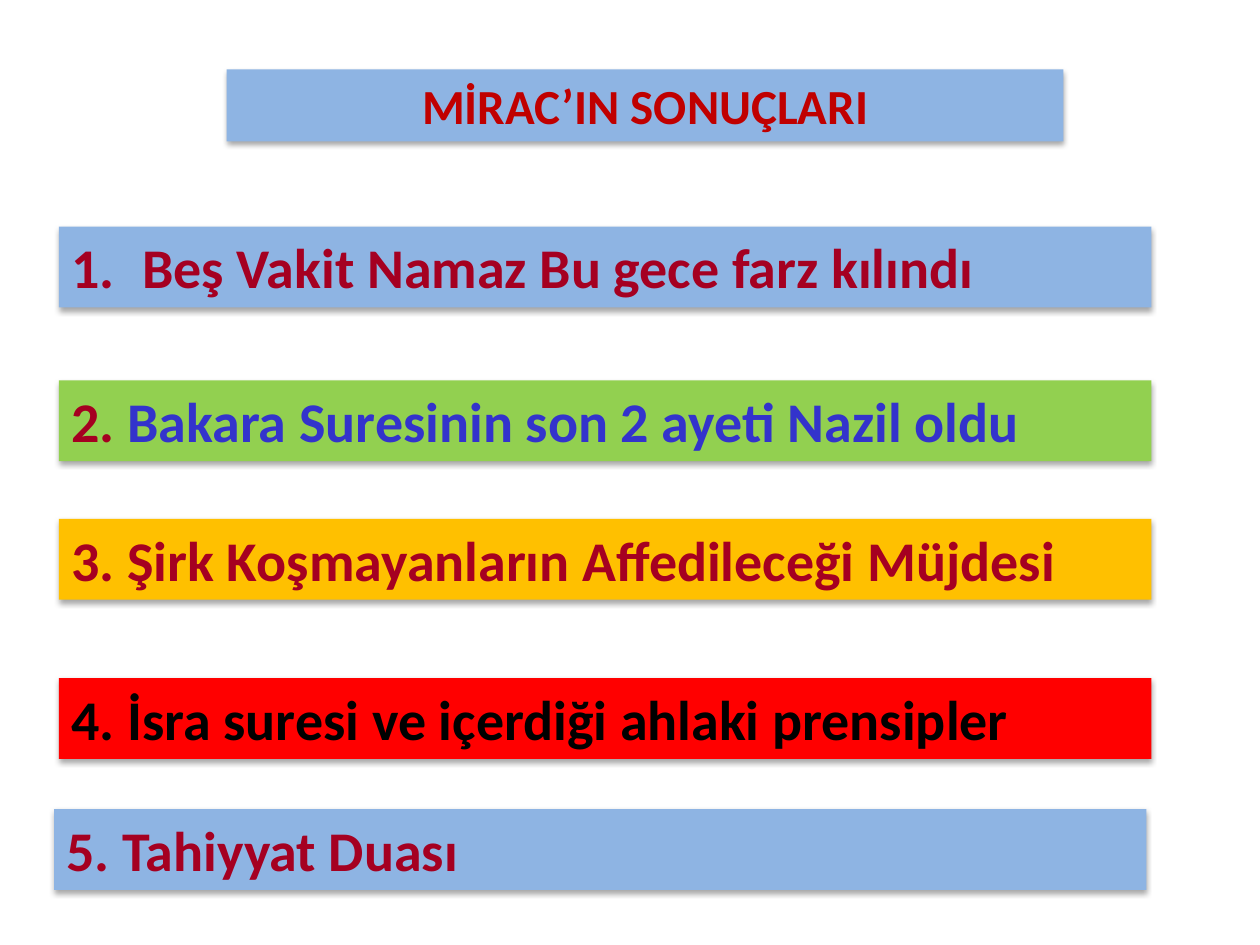
from dataclasses import dataclass

from lxml import etree
from pptx import Presentation
from pptx import util as u
from pptx.dml.color import RGBColor
from pptx.enum import shapes, text
from pptx.oxml.ns import qn


@dataclass(frozen=True)
class Theme:
    """Colours, font and type sizes of the slide."""
    font: str = "Calibri"
    title_size: int = 28
    item_size: int = 32
    blue: str = "8EB4E3"
    green: str = "92D050"
    amber: str = "FFC000"
    red: str = "FF0000"
    title_ink: str = "C00000"
    crimson: str = "A50021"
    indigo: str = "3333CC"
    black: str = "000000"


THEME = Theme()
BAR_WIDTH, BAR_HEIGHT = 22.02, 1.63
HANGING_INDENT = 1.43


def add_soft_shadow(shape):
    """Give the shape a soft shadow that falls straight down."""
    shape.shadow.inherit = False
    effects = shape._element.spPr.find(qn("a:effectLst"))
    shadow = etree.SubElement(effects, qn("a:outerShdw"), blurRad="40000",
                              dist="23000", dir="5400000", rotWithShape="0")
    colour = etree.SubElement(shadow, qn("a:srgbClr"), val=THEME.black)
    etree.SubElement(colour, qn("a:alpha"), val="35000")


def set_hanging_indent(paragraph, numbered):
    """Hang the paragraph's first line and number it if asked."""
    properties = paragraph._p.get_or_add_pPr()
    properties.set("marL", str(u.Cm(HANGING_INDENT)))
    properties.set("indent", str(-u.Cm(HANGING_INDENT)))
    if numbered:
        etree.SubElement(properties, qn("a:buFont"), typeface="+mj-lt")
        etree.SubElement(properties, qn("a:buAutoNum"), type="arabicPeriod")


def add_bar(slide, box, fill, pieces, size, alignment=text.PP_ALIGN.LEFT):
    """Draw a shadowed bar with coloured pieces of text and return its paragraph."""
    shape = slide.shapes.add_shape(shapes.MSO_SHAPE.RECTANGLE, *map(u.Cm, box))
    shape.fill.solid()
    shape.fill.fore_color.rgb = RGBColor.from_string(fill)
    shape.line.fill.background()
    add_soft_shadow(shape)
    frame = shape.text_frame
    frame.word_wrap = True
    frame.auto_size = text.MSO_AUTO_SIZE.SHAPE_TO_FIT_TEXT
    frame.vertical_anchor = text.MSO_ANCHOR.TOP
    paragraph = frame.paragraphs[0]
    paragraph.alignment = alignment
    for wording, colour in pieces:
        run = paragraph.add_run()
        run.text = wording
        run.font.name = THEME.font
        run.font.size = u.Pt(size)
        run.font.bold = True
        run.font.color.rgb = RGBColor.from_string(colour)
    return paragraph


def add_title(slide, box):
    """Place the centred title bar."""
    add_bar(slide, box, THEME.blue, [("MİRAC’IN SONUÇLARI", THEME.title_ink)],
            THEME.title_size, text.PP_ALIGN.CENTER)


def add_results(slide, left, top):
    """Place the five result bars below the given corner."""
    results = [
        (0, 0, THEME.blue, [("Beş Vakit Namaz Bu gece farz kılındı", THEME.crimson)]),
        (0, 3.1, THEME.green, [("2. ", THEME.crimson),
                               ("Bakara Suresinin son 2 ayeti Nazil oldu", THEME.indigo)]),
        (0, 5.89, THEME.amber, [("3. Şirk Koşmayanların Affedileceği Müjdesi", THEME.crimson)]),
        (0, 9.1, THEME.red, [("4. İsra suresi ve içerdiği ahlaki prensipler", THEME.black)]),
        (-0.1, 11.74, THEME.blue, [("5. Tahiyyat Duası", THEME.crimson)]),
    ]
    for index, (shift, drop, fill, pieces) in enumerate(results):
        box = (left + shift, top + drop, BAR_WIDTH, BAR_HEIGHT)
        paragraph = add_bar(slide, box, fill, pieces, THEME.item_size)
        if index < len(results) - 1:
            set_hanging_indent(paragraph, numbered=index == 0)


def main():
    """Build and save the presentation."""
    presentation = Presentation()
    presentation.slide_width, presentation.slide_height = u.Cm(25.4), u.Cm(19.05)
    slide = presentation.slides.add_slide(presentation.slide_layouts[6])
    add_title(slide, (4.57, 1.4, 16.87, 1.45))
    add_results(slide, 1.19, 4.57)
    presentation.save("out.pptx")


if __name__ == "__main__":
    main()
